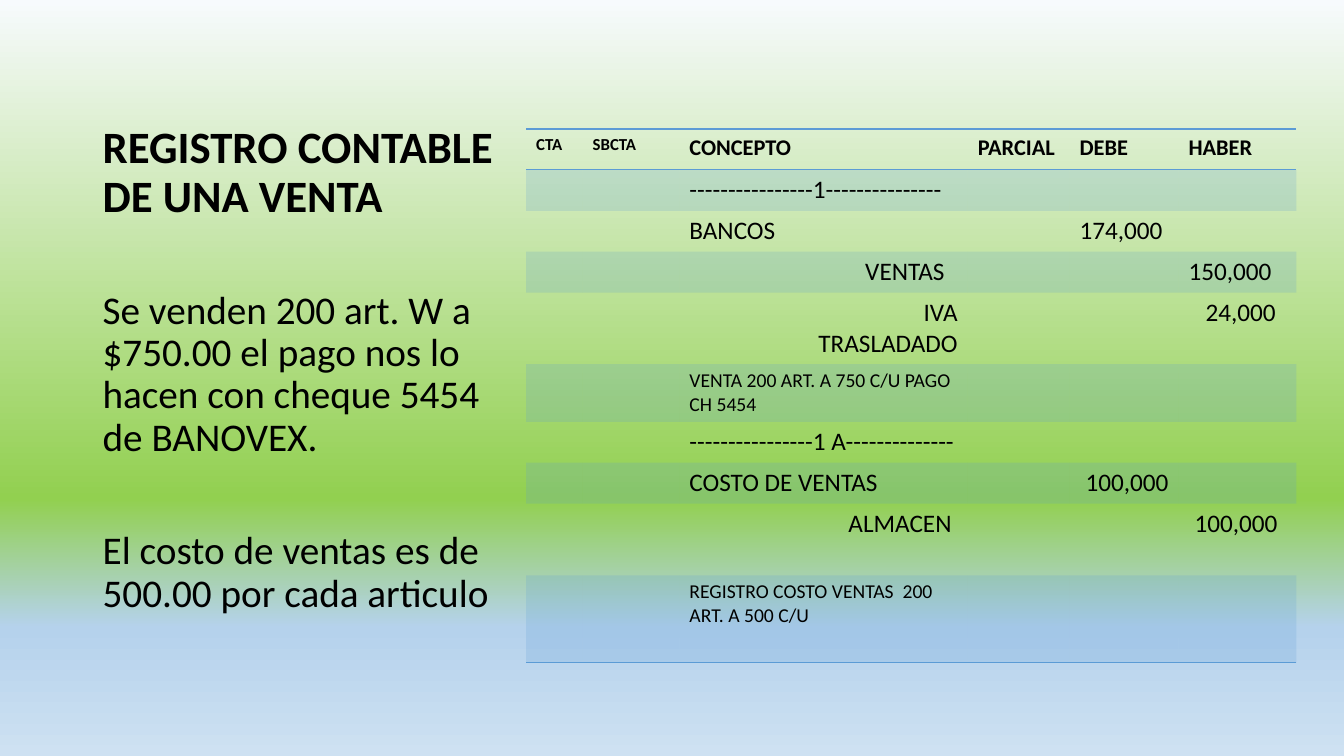
import pptx
import pptx.util
import pptx.oxml
import pptx.oxml.ns
import pptx.dml.color
import pptx.enum.text
import lxml.etree

Inch, Pt = pptx.util.Inches, pptx.util.Pt
ALIGN, ANCHOR = pptx.enum.text.PP_ALIGN, pptx.enum.text.MSO_ANCHOR
WIDE, HIGH = 13.33, 7.5
HUES = {"text": "000000", "band": "5B9BD5", "pale": "F7FAFD",
        "green": "92D050", "sky": "B5D2EC", "mist": "CEE1F2"}
NS = 'xmlns:a="http://schemas.openxmlformats.org/drawingml/2006/main"'


def write(para, text, size=18, bold=False, align=ALIGN.LEFT, line=None, gap=0):
    run = para.add_run()
    run.text = text
    run.font.name, run.font.size, run.font.bold = "Calibri", Pt(size), bold
    run.font.color.rgb = pptx.dml.color.RGBColor.from_string(HUES["text"])
    para.alignment, para.line_spacing, para.space_before = align, line, Pt(gap)


deck = pptx.Presentation()
deck.slide_width, deck.slide_height = Inch(WIDE), Inch(HIGH)
slide = deck.slides.add_slide(deck.slide_layouts[6])

# Background: four colours from top to bottom
fill = slide.background.fill
fill.gradient()
fill.gradient_angle = 270
stops = slide.background._cSld.find(".//" + pptx.oxml.ns.qn("a:gsLst"))
for stop in list(stops):
    stops.remove(stop)
for share, hue in ((0, "pale"), (66, "green"), (83, "sky"), (100, "mist")):
    stops.append(pptx.oxml.parse_xml(
        f'<a:gs {NS} pos="{share * 1000}"><a:srgbClr val="{HUES[hue]}"/></a:gs>'))

# Left column: title and story, given as top, height, anchor and paragraphs
left, span = 0.069 * WIDE, 0.3225 * WIDE
blocks = [
    (0.5, 1.75, ANCHOR.BOTTOM, 32, True,
     [("REGISTRO CONTABLE DE UNA VENTA", 0)]),
    (2.83, 3.59, ANCHOR.TOP, 28, False,
     [("Se venden 200 art. W a $750.00 el pago nos lo hacen con cheque 5454 "
       "de BANOVEX.", 10),
      ("El costo de ventas es de 500.00 por cada articulo", 51)]),
]
for top, tall, anchor, size, bold, paras in blocks:
    frame = slide.shapes.add_textbox(
        Inch(left), Inch(top), Inch(span), Inch(tall)).text_frame
    frame.word_wrap, frame.vertical_anchor = True, anchor
    for num, (text, gap) in enumerate(paras):
        para = frame.add_paragraph() if num else frame.paragraphs[0]
        write(para, text, size, bold, line=0.9, gap=gap)

# Journal: column widths in inches, then each row as height in points,
# text size and filled cells
cols = [0.56, 0.96, 2.86, 1.01, 1.08, 1.17]
heads = ["CTA", "SBCTA", "CONCEPTO", "PARCIAL", "DEBE", "HABER"]
unit = 29.2
rows = [
    (unit, 16, dict(enumerate(heads))),
    (unit, 18, {2: "----------------1---------------"}),
    (unit, 18, {2: "BANCOS", 4: "174,000"}),
    (unit, 18, {2: "VENTAS", 5: "150,000"}),
    (51.2, 18, {2: "IVA TRASLADADO", 5: "24,000"}),
    (41.2, 14, {2: "VENTA 200 ART. A 750 C/U PAGO CH 5454"}),
    (unit, 18, {2: "----------------1 A--------------"}),
    (unit, 18, {2: "COSTO DE VENTAS", 4: "100,000"}),
    (51.2, 18, {2: "ALMACEN", 5: "100,000"}),
    (62.6, 14, {2: "REGISTRO COSTO VENTAS  200 ART. A 500 C/U"}),
]
# Credit accounts sit at the right; margins as left and right
credit = {"VENTAS", "IVA TRASLADADO", "ALMACEN"}
inset = {"VENTAS": (0.1, 0.23), "IVA TRASLADADO": (1.2, 0.1),
         "ALMACEN": (0.1, 0.16), "24,000": (0.27, 0), "100,000": (0.16, 0)}

table = slide.shapes.add_table(
    len(rows), len(cols), Inch(left + span), Inch(1.28),
    Inch(sum(cols)), Pt(sum(row[0] for row in rows))).table
table.horz_banding = False
table._tbl.tblPr.find(pptx.oxml.ns.qn("a:tableStyleId")).text = (
    "{2D5ABB26-0587-4C30-8999-92F81FD0307C}")
for col, width in zip(table.columns, cols):
    col.width = Inch(width)

for num, (tall, size, texts) in enumerate(rows):
    table.rows[num].height = Pt(tall)
    sides = {0: ["T", "B"], len(rows) - 1: ["B"]}.get(num, [])
    for pos, cell in enumerate(table.rows[num].cells):
        # Text
        text = texts.get(pos, "")
        para = cell.text_frame.paragraphs[0]
        if text:
            small = num == 0 and pos < 2
            write(para, text, 12 if small else size, num == 0,
                  ALIGN.RIGHT if text in credit else ALIGN.LEFT)
            start, end = inset.get(text, (0.1, 0.1))
            cell.margin_left, cell.margin_right = Inch(start), Inch(end)
        else:
            para.font.size = Pt(size)
        # Odd rows carry a clear blue band
        props = cell._tc.get_or_add_tcPr()
        if num % 2:
            cell.fill.solid()
            cell.fill.fore_color.rgb = pptx.dml.color.RGBColor.from_string(
                HUES["band"])
            tint = props.find(".//" + pptx.oxml.ns.qn("a:srgbClr"))
            lxml.etree.SubElement(
                tint, pptx.oxml.ns.qn("a:alpha")).set("val", "20000")
        else:
            cell.fill.background()
        # Rules above and below the head and under the last row
        for at, side in enumerate(sides):
            props.insert(at, pptx.oxml.parse_xml(
                f'<a:ln{side} {NS} w="12700"><a:solidFill><a:srgbClr '
                f'val="{HUES["band"]}"/></a:solidFill></a:ln{side}>'))

deck.save("out.pptx")
